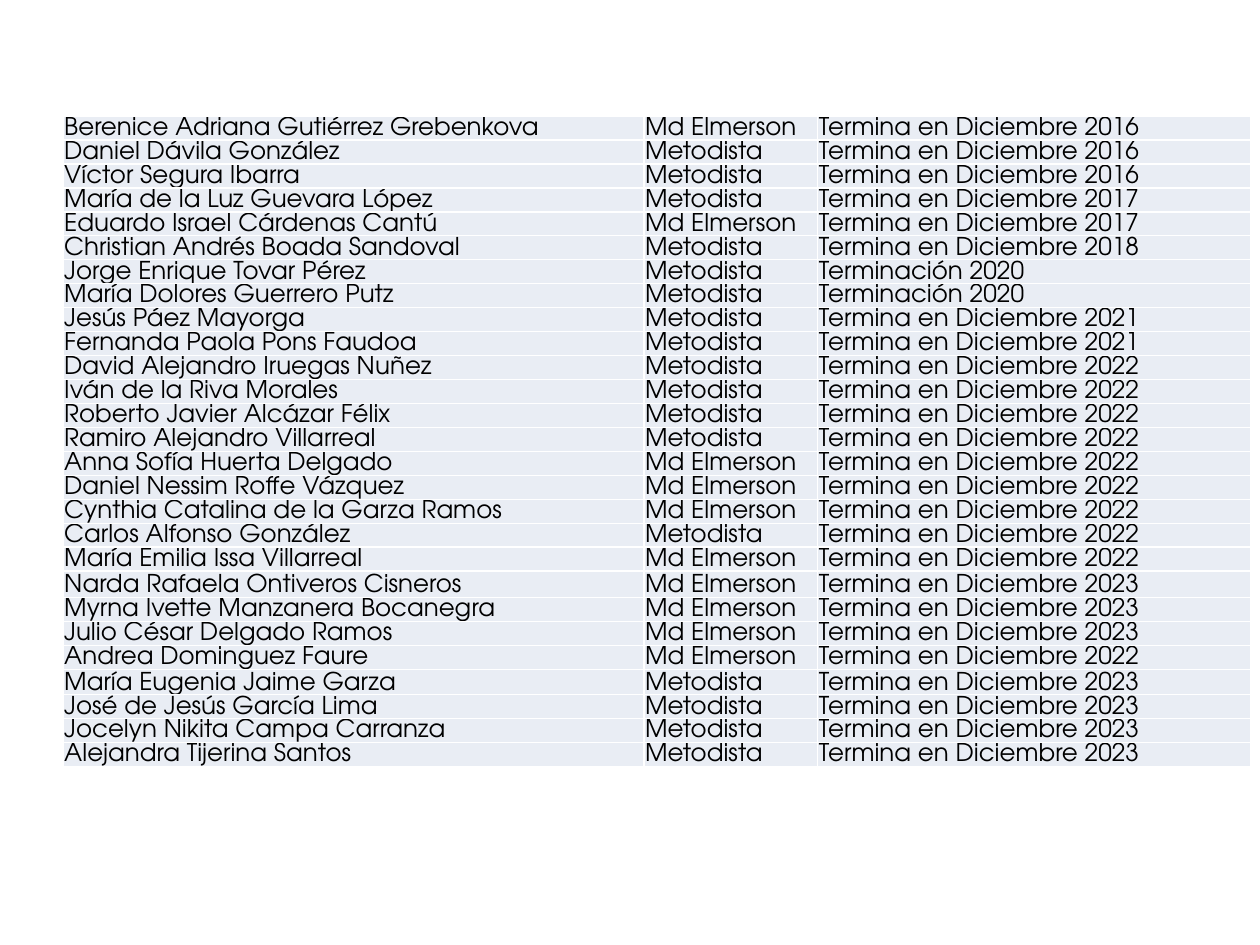
from lxml import etree
from pptx import Presentation
from pptx import util as u
from pptx.dml import color
from pptx.enum import text
from pptx.oxml import ns

HUES = {"cell": "E9EDF4", "line": "FFFFFF", "text": "000000"}
FONT = "TeX Gyre Adventor"
MET, AND = "Metodista", "Md Elmerson"
COLS = [4.61, 1.38, 3.44]
ROW = 0.18
TALL = {19: 0.21, 23: 0.2}

PEOPLE = [
    ("Berenice Adriana Gutiérrez Grebenkova", AND, 2016),
    ("Daniel Dávila González", MET, 2016),
    ("Víctor Segura Ibarra", MET, 2016),
    ("María de la Luz Guevara López", MET, 2017),
    ("Eduardo Israel Cárdenas Cantú", AND, 2017),
    ("Christian Andrés Boada Sandoval", MET, 2018),
    ("Jorge Enrique Tovar Pérez", MET, 2020),
    ("María Dolores Guerrero Putz", MET, 2020),
    ("Jesús Páez Mayorga", MET, 2021),
    ("Fernanda Paola Pons Faudoa", MET, 2021),
    ("David Alejandro Iruegas Nuñez", MET, 2022),
    ("Iván de la Riva Morales", MET, 2022),
    ("Roberto Javier Alcázar Félix", MET, 2022),
    ("Ramiro Alejandro Villarreal", MET, 2022),
    ("Anna Sofía Huerta Delgado", AND, 2022),
    ("Daniel Nessim Roffe Vázquez", AND, 2022),
    ("Cynthia Catalina de la Garza Ramos", AND, 2022),
    ("Carlos Alfonso González", MET, 2022),
    ("María Emilia Issa Villarreal", AND, 2022),
    ("Narda Rafaela Ontiveros Cisneros", AND, 2023),
    ("Myrna Ivette Manzanera Bocanegra", AND, 2023),
    ("Julio César Delgado Ramos", AND, 2023),
    ("Andrea Dominguez Faure", AND, 2022),
    ("María Eugenia Jaime Garza", MET, 2023),
    ("José de Jesús García Lima", MET, 2023),
    ("Jocelyn Nikita Campa Carranza", MET, 2023),
    ("Alejandra Tijerina Santos", MET, 2023),
]


def rgb(name):
    return color.RGBColor.from_string(HUES[name])


def end_text(year):
    return "Terminación 2020" if year == 2020 else f"Termina en Diciembre {year}"


def add_edges(cell):
    props = cell._tc.get_or_add_tcPr()
    for spot, side in enumerate("LRTB"):
        line = etree.Element(ns.qn(f"a:ln{side}"), w=str(u.Pt(1)))
        fill = etree.SubElement(line, ns.qn("a:solidFill"))
        etree.SubElement(fill, ns.qn("a:srgbClr"), val=HUES["line"])
        props.insert(spot, line)


def fill_cell(cell, words):
    cell.margin_left = cell.margin_right = cell.margin_top = u.Inches(0.01)
    cell.margin_bottom = 0
    cell.vertical_anchor = text.MSO_ANCHOR.BOTTOM
    cell.fill.solid()
    cell.fill.fore_color.rgb = rgb("cell")
    add_edges(cell)
    cell.text_frame.text = words
    font = cell.text_frame.paragraphs[0].runs[0].font
    font.name = FONT
    font.size = u.Pt(14)
    font.color.rgb = rgb("text")


def add_list(slide):
    frame = slide.shapes.add_table(
        len(PEOPLE), len(COLS), u.Inches(0.5), u.Inches(0.92),
        u.Inches(sum(COLS)), u.Inches(ROW * len(PEOPLE)))
    table = frame.table
    table.first_row = table.horz_banding = False
    for col, width in zip(table.columns, COLS):
        col.width = u.Inches(width)
    for num, (name, place, year) in enumerate(PEOPLE):
        row = table.rows[num]
        row.height = u.Inches(TALL.get(num, ROW))
        for cell, words in zip(row.cells, (name, place, end_text(year))):
            fill_cell(cell, words)
    frame.height = u.Inches(6.58)


def main():
    deck = Presentation()
    deck.slide_width, deck.slide_height = u.Inches(10), u.Inches(7.5)
    add_list(deck.slides.add_slide(deck.slide_layouts[6]))
    deck.save("out.pptx")


if __name__ == "__main__":
    main()
